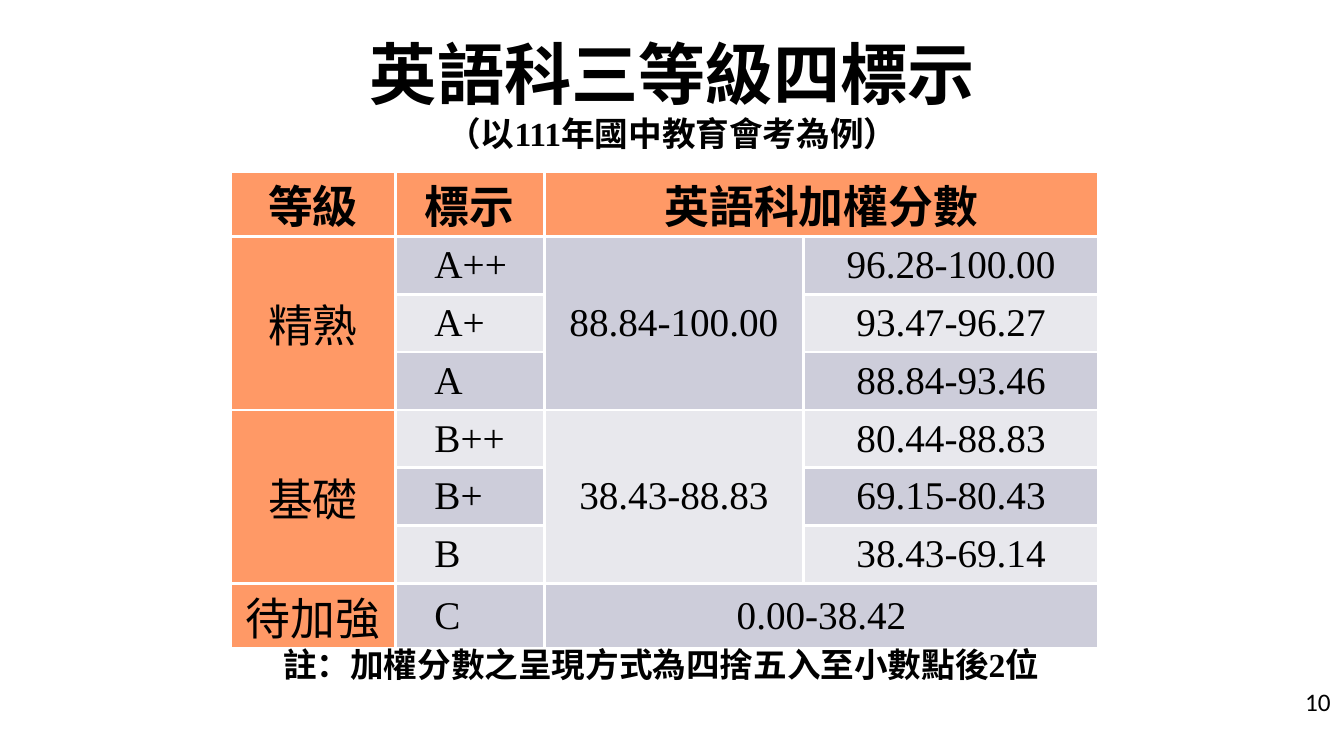
from lxml.etree import SubElement
from pptx import Presentation
from pptx.dml.color import RGBColor
from pptx.enum.text import MSO_ANCHOR as Anchor, PP_ALIGN as Align
from pptx.oxml.ns import qn
from pptx.util import Inches, Pt

COLORS = {"text": "000000", "head": "FF9966", "dark": "CDCDDA",
          "light": "E8E8ED", "border": "FFFFFF"}
CJK, SERIF, SANS = "Noto Sans CJK SC", "Times New Roman", "Calibri"
COLS = [1.63, 1.48, 2.57, 2.93]
ROW_H = 0.574
ROWS = [
    ["等級", "標示", "英語科加權分數", ""],
    ["精熟", "A++", "88.84-100.00", "96.28-100.00"],
    ["", "A+", "", "93.47-96.27"],
    ["", "A", "", "88.84-93.46"],
    ["基礎", "B++", "38.43-88.83", "80.44-88.83"],
    ["", "B+", "", "69.15-80.43"],
    ["", "B", "", "38.43-69.14"],
    ["待加強", "C", "0.00-38.42", ""],
]
MERGES = [(0, 2, 0, 3), (1, 0, 3, 0), (1, 2, 3, 2),
          (4, 0, 6, 0), (4, 2, 6, 2), (7, 2, 7, 3)]


def style(r, size, latin, bold=False):
    f = r.font
    f.size, f.bold, f.name = Pt(size), bold, latin
    f.color.rgb = RGBColor.from_string(COLORS["text"])
    SubElement(r._r.get_or_add_rPr(), qn("a:ea")).set("typeface", CJK)


def add_title(s, x, y, w, h):
    sp = s.shapes.title
    sp.left, sp.top, sp.width, sp.height = map(Inches, (x, y, w, h))
    tf = sp.text_frame
    tf.vertical_anchor = Anchor.MIDDLE
    p = tf.paragraphs[0]
    p.alignment = Align.CENTER
    for text, size, font in [("英語科三等級四標示", 48, CJK), ("（以", 24, CJK),
                             ("111", 24, SERIF), ("年國中教育會考為例）", 24, CJK)]:
        r = p.add_run()
        r.text = text
        style(r, size, font, True)
        if size == 48:
            p.add_line_break()


def add_borders(cell):
    tcPr = cell._tc.get_or_add_tcPr()
    for side in ("lnL", "lnR", "lnT", "lnB"):
        ln = SubElement(tcPr, qn(f"a:{side}"), w=str(Pt(2.25)))
        fill = SubElement(ln, qn("a:solidFill"))
        SubElement(fill, qn("a:srgbClr"), val=COLORS["border"])


def format_cell(cell, row, col, text):
    add_borders(cell)
    band = "head" if row == 0 or col == 0 else "dark" if row % 2 else "light"
    cell.fill.solid()
    cell.fill.fore_color.rgb = RGBColor.from_string(COLORS[band])
    grade = col == 1 and row > 0
    side = Inches(0.07 if col == 3 else 0.02)
    cell.margin_left = Inches(0.39) if grade else side
    cell.margin_right = side
    cell.margin_top = cell.margin_bottom = 0
    cell.vertical_anchor = Anchor.MIDDLE
    if text:
        p = cell.text_frame.paragraphs[0]
        p.text = text
        p.alignment = Align.LEFT if grade else Align.CENTER
        style(p.runs[0], 32 if band == "head" else 28, SERIF, row == 0)


def add_score_table(s, x, y):
    size = sum(COLS), ROW_H * len(ROWS)
    table = s.shapes.add_table(len(ROWS), len(COLS),
                               *map(Inches, (x, y, *size))).table
    for column, width in zip(table.columns, COLS):
        column.width = Inches(width)
    for i, values in enumerate(ROWS):
        table.rows[i].height = Inches(ROW_H)
        for j, text in enumerate(values):
            format_cell(table.cell(i, j), i, j, text)
    for top, left, bottom, right in MERGES:
        table.cell(top, left).merge(table.cell(bottom, right))


def add_text(s, box, text, size, font, bold=False, align=Align.LEFT, anchor=Anchor.TOP):
    tf = s.shapes.add_textbox(*map(Inches, box)).text_frame
    tf.word_wrap = True
    tf.vertical_anchor = anchor
    p = tf.paragraphs[0]
    p.text = text
    p.alignment = align
    style(p.runs[0], size, font, bold)


def main():
    prs = Presentation()
    prs.slide_width, prs.slide_height = Inches(13.333), Inches(7.5)
    s = prs.slides.add_slide(prs.slide_layouts[5])
    add_title(s, 0.67, 0.3, 12, 1.25)
    add_score_table(s, 2.29, 1.7)
    add_text(s, (2.71, 6.34, 8.3, 0.5), "註：加權分數之呈現方式為四捨五入至小數點後2位",
             24, SERIF, True)
    add_text(s, (10.19, 6.76, 3.11, 0.4), "10", 18, SANS,
             align=Align.RIGHT, anchor=Anchor.MIDDLE)
    prs.save("out.pptx")


if __name__ == "__main__":
    main()
